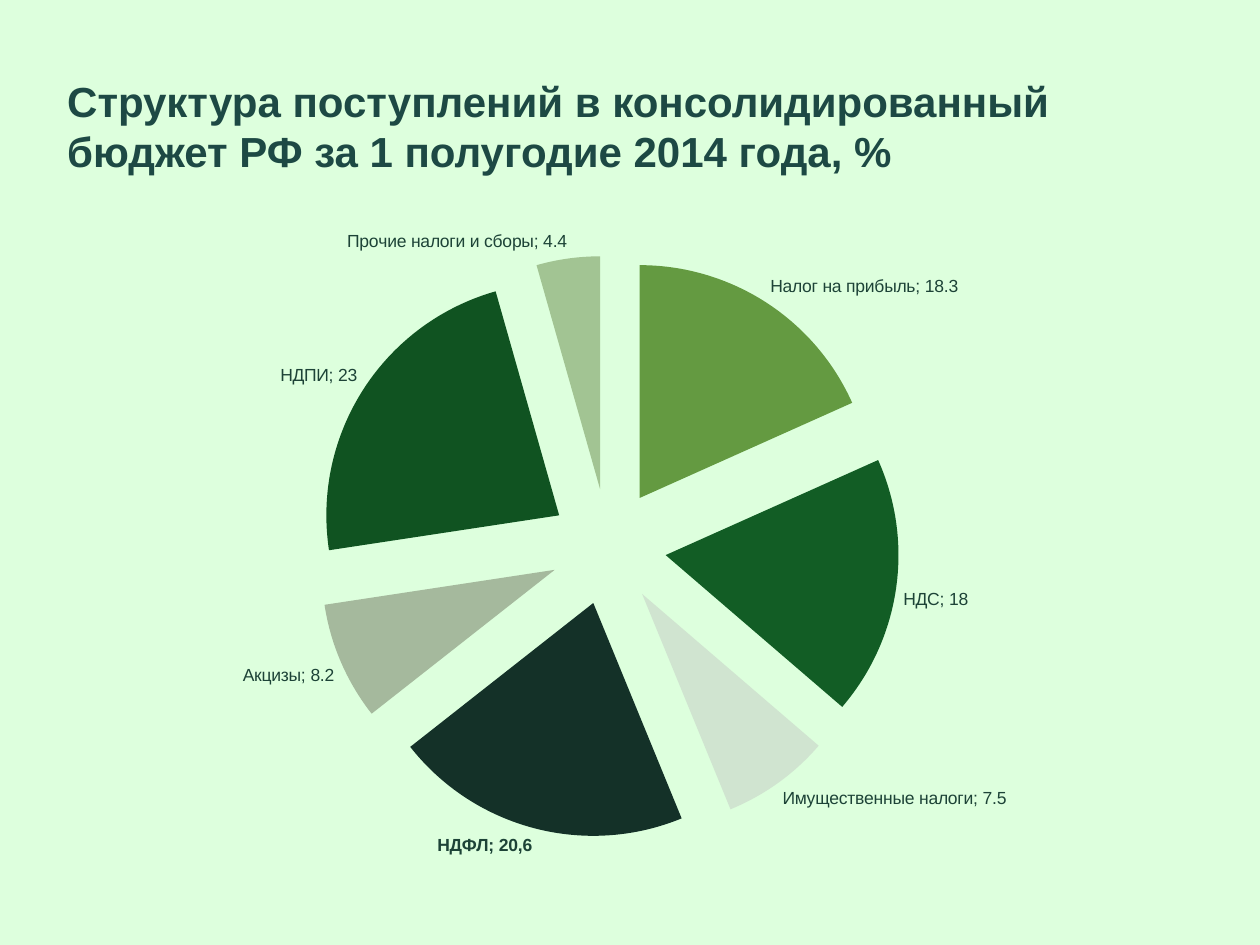
from lxml import etree
from pptx import Presentation
from pptx.chart.data import CategoryChartData
from pptx.dml.color import RGBColor
from pptx.enum.chart import XL_CHART_TYPE, XL_LABEL_POSITION
from pptx.enum.text import MSO_ANCHOR, PP_ALIGN
from pptx.oxml.ns import qn
from pptx.util import Cm, Pt

FONT = "Arial"
TITLE = "Структура поступлений в консолидированный бюджет РФ за 1 полугодие 2014 года, %"
TAXES = [
    ("Налог на прибыль", 18.3, "649A41"),
    ("НДС", 18, "125D25"),
    ("Имущественные налоги", 7.5, "D0E4D0"),
    ("НДФЛ", 20.6, "143128"),
    ("Акцизы", 8.2, "A5B99D"),
    ("НДПИ", 23, "105321"),
    ("Прочие налоги и сборы", 4.4, "A2C493"),
]


def paint(fill, color):
    fill.solid()
    fill.fore_color.rgb = RGBColor.from_string(color)


def style(font, size, color, bold=False):
    font.name, font.size, font.bold = FONT, Pt(size), bold
    font.color.rgb = RGBColor.from_string(color)


def add_title(slide, left, top, width, height):
    title = slide.shapes.title
    title.left, title.top, title.width, title.height = left, top, width, height
    frame = title.text_frame
    frame.text = TITLE
    frame.word_wrap = True
    frame.vertical_anchor = MSO_ANCHOR.MIDDLE
    para = frame.paragraphs[0]
    para.alignment = PP_ALIGN.LEFT
    style(para.font, 24, "1D4944", True)


def set_layout(chart, **box):
    """Fix the inner plot area, in fractions of the chart."""
    area = chart.element.find(".//" + qn("c:plotArea"))
    for old in area.findall(qn("c:layout")):
        area.remove(old)
    layout = etree.Element(qn("c:layout"))
    manual = etree.SubElement(layout, qn("c:manualLayout"))
    parts = {"layoutTarget": "inner", "xMode": "edge", "yMode": "edge", **box}
    for tag, val in parts.items():
        etree.SubElement(manual, qn("c:" + tag)).set("val", str(val))
    area.insert(0, layout)


def explode(point, amount):
    node = etree.Element(qn("c:explosion"))
    node.set("val", str(amount))
    point.format.fill._xPr.addprevious(node)


def add_pie(slide, left, top, width, height):
    data = CategoryChartData()
    data.categories = [name for name, _, _ in TAXES]
    data.add_series("Series 1", [val for _, val, _ in TAXES])
    chart = slide.shapes.add_chart(
        XL_CHART_TYPE.PIE, left, top, width, height, data
    ).chart
    chart.has_title = chart.has_legend = False
    style(chart.font, 10, "1D4337")
    set_layout(chart, x=0.28, y=0.15, w=0.41, h=0.7)

    plot = chart.plots[0]
    plot.vary_by_categories = True
    series = plot.series[0]
    for i, (_, _, color) in enumerate(TAXES):
        point = series.points[i]
        paint(point.format.fill, color)
        point.format.line.fill.background()
        explode(point, 25)

    labels = series.data_labels
    labels.show_category_name = labels.show_value = True
    labels.show_percentage = False
    labels.number_format, labels.number_format_is_linked = "General", False
    labels.position = XL_LABEL_POSITION.OUTSIDE_END
    style(labels.font, 10, "1D4337")

    income = series.points[3].data_label
    income.text_frame.text = "НДФЛ; 20,6"
    run = income.text_frame.paragraphs[0].runs[0]
    style(run.font, 10, "1D4337", True)
    income.position = XL_LABEL_POSITION.OUTSIDE_END


def main():
    deck = Presentation()
    deck.slide_width, deck.slide_height = Cm(25.4), Cm(19.05)
    slide = deck.slides.add_slide(deck.slide_layouts[5])
    paint(slide.background.fill, "DDFFDD")
    left, width = Cm(1.1), Cm(23.01)
    add_title(slide, left, Cm(1.31), width, Cm(2.44))
    add_pie(slide, left, Cm(4.32), width, Cm(13.41))
    deck.save("out.pptx")


if __name__ == "__main__":
    main()
